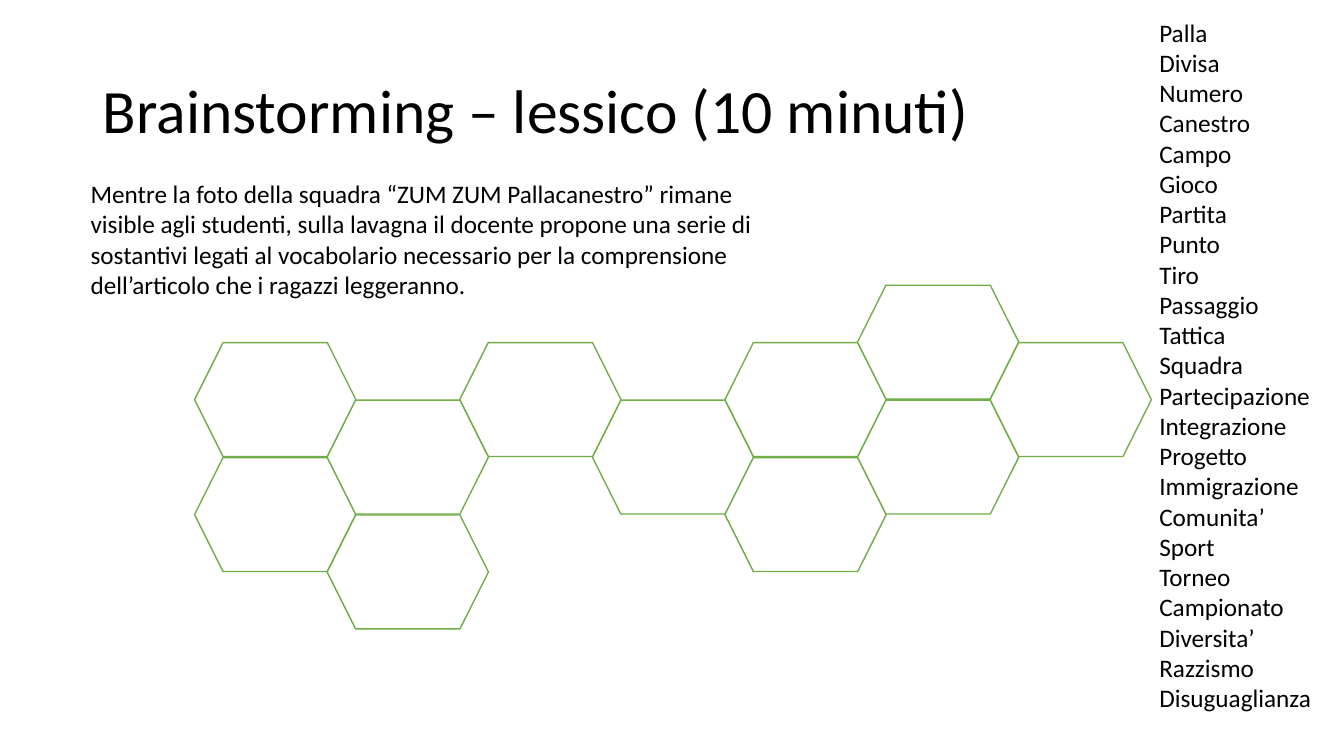
from dataclasses import dataclass

from pptx import Presentation
from pptx.dml.color import RGBColor
from pptx.enum.shapes import MSO_SHAPE
from pptx.enum.text import MSO_ANCHOR, MSO_AUTO_SIZE, PP_ALIGN
from pptx.slide import Slide
from pptx.text.text import TextFrame
from pptx.util import Inches, Pt

COLORS = {"text": "000000", "cell": "FFFFFF", "edge": "70AD47"}
TITLE_FRAME = {"vertical_anchor": MSO_ANCHOR.MIDDLE, "auto_size": MSO_AUTO_SIZE.NONE, "word_wrap": True}
BODY_FRAME = {"vertical_anchor": MSO_ANCHOR.TOP, "auto_size": MSO_AUTO_SIZE.SHAPE_TO_FIT_TEXT, "word_wrap": True}
TITLE_PARAGRAPH = {"alignment": PP_ALIGN.LEFT, "line_spacing": 0.9}
BODY_PARAGRAPH = {"alignment": PP_ALIGN.LEFT}
TITLE_FONT = {"name": "Calibri", "size": Pt(44)}
BODY_FONT = {"name": "Calibri", "size": Pt(18)}

TITLE = "Brainstorming – lessico (10 minuti)"
INSTRUCTIONS = (
    "Mentre la foto della squadra “ZUM ZUM Pallacanestro” rimane visible agli studenti, "
    "sulla lavagna il docente propone una serie di sostantivi legati al vocabolario "
    "necessario per la comprensione dell’articolo che i ragazzi leggeranno."
)
VOCABULARY = [
    "Palla", "Divisa", "Numero", "Canestro", "Campo", "Gioco", "Partita", "Punto",
    "Tiro", "Passaggio", "Tattica", "Squadra", "Partecipazione", "Integrazione",
    "Progetto", "Immigrazione", "Comunita’", "Sport", "Torneo", "Campionato",
    "Diversita’", "Razzismo", "Disuguaglianza",
]


@dataclass(frozen=True)
class Area:
    """A rectangle in inches."""

    left: float
    top: float
    width: float
    height: float

    def lengths(self) -> tuple:
        """Return the four sides as slide lengths."""
        return tuple(Inches(side) for side in (self.left, self.top, self.width, self.height))


@dataclass(frozen=True)
class HoneycombCell:
    """A hexagon's column and half-height row in the honeycomb."""

    column: int
    half_row: int

    def area(self) -> Area:
        """Return the cell's place on the slide."""
        return Area(1.93 + 1.315 * self.column, 2.83 + 0.57 * self.half_row, 1.6, 1.13)


@dataclass(frozen=True)
class TextBlock:
    """Paragraphs and the area they fill."""

    area: Area
    lines: list


HONEYCOMB = [
    HoneycombCell(0, 1), HoneycombCell(0, 3), HoneycombCell(3, 2), HoneycombCell(4, 3),
    HoneycombCell(4, 1), HoneycombCell(2, 1), HoneycombCell(1, 2), HoneycombCell(5, 2),
    HoneycombCell(5, 0), HoneycombCell(1, 4), HoneycombCell(6, 1),
]
TEXT_BLOCKS = [
    TextBlock(Area(0.8, 1.72, 7.09, 1.31), [INSTRUCTIONS]),
    TextBlock(Area(11.4, 0.12, 1.93, 7.37), VOCABULARY),
]


def apply_format(target: object, values: dict) -> None:
    """Set each format value on the target."""
    for attribute, value in values.items():
        setattr(target, attribute, value)


def color(role: str) -> RGBColor:
    """Return the colour of a role."""
    return RGBColor.from_string(COLORS[role])


def write_lines(frame: TextFrame, lines: list, frame_format: dict, paragraph_format: dict, font_format: dict) -> None:
    """Fill a text frame with formatted paragraphs."""
    apply_format(frame, frame_format)
    frame.text = "\n".join(lines)
    for paragraph in frame.paragraphs:
        apply_format(paragraph, paragraph_format)
        for run in paragraph.runs:
            apply_format(run.font, font_format)
            run.font.color.rgb = color("text")


def add_title(slide: Slide) -> None:
    """Place and format the slide title."""
    heading = slide.shapes.title
    sides = Area(0.92, 0.4, 11.5, 1.45).lengths()
    apply_format(heading, dict(zip(("left", "top", "width", "height"), sides)))
    write_lines(heading.text_frame, [TITLE], TITLE_FRAME, TITLE_PARAGRAPH, TITLE_FONT)


def add_cell(slide: Slide, cell: HoneycombCell) -> None:
    """Draw one honeycomb hexagon."""
    hexagon = slide.shapes.add_shape(MSO_SHAPE.HEXAGON, *cell.area().lengths())
    hexagon.shadow.inherit = False
    hexagon.fill.solid()
    hexagon.fill.fore_color.rgb = color("cell")
    hexagon.line.color.rgb = color("edge")
    hexagon.line.width = Pt(1)


def add_text_block(slide: Slide, block: TextBlock) -> None:
    """Draw one block of text."""
    frame = slide.shapes.add_textbox(*block.area.lengths()).text_frame
    write_lines(frame, block.lines, BODY_FRAME, BODY_PARAGRAPH, BODY_FONT)


def main() -> None:
    """Build and save the brainstorming slide."""
    presentation = Presentation()
    apply_format(presentation, {"slide_width": Inches(13.33), "slide_height": Inches(7.5)})
    slide = presentation.slides.add_slide(presentation.slide_layouts.get_by_name("Title Only"))
    add_title(slide)
    for cell in HONEYCOMB:
        add_cell(slide, cell)
    for block in TEXT_BLOCKS:
        add_text_block(slide, block)
    presentation.save("out.pptx")


if __name__ == "__main__":
    main()
